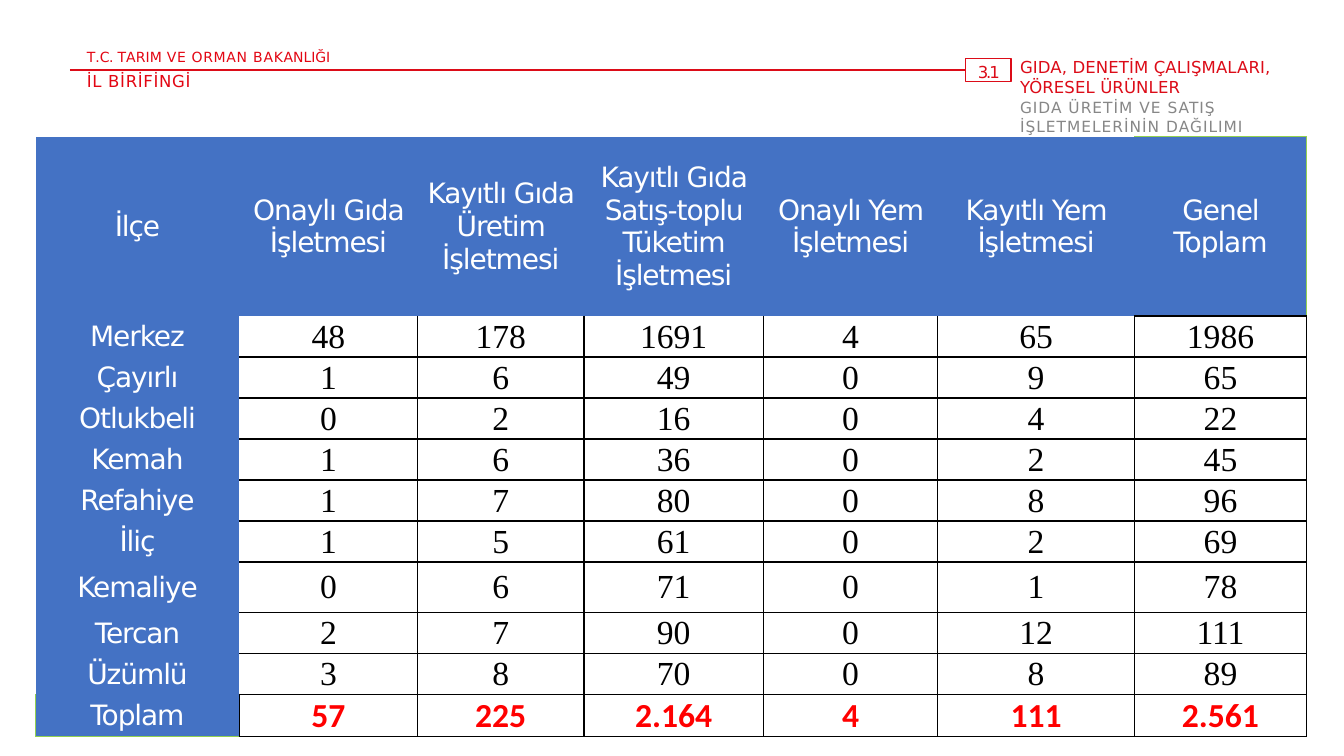
from lxml import etree
from pptx import Presentation
from pptx.dml.color import RGBColor
from pptx.enum.shapes import MSO_CONNECTOR, MSO_SHAPE
from pptx.enum.text import MSO_ANCHOR, MSO_AUTO_SIZE, PP_ALIGN
from pptx.oxml.ns import qn
from pptx.util import Pt

STRAIGHT, RECT = MSO_CONNECTOR.STRAIGHT, MSO_SHAPE.RECTANGLE
TOP, MIDDLE = MSO_ANCHOR.TOP, MSO_ANCHOR.MIDDLE
LEFT, CENTER = PP_ALIGN.LEFT, PP_ALIGN.CENTER
NO_FIT = MSO_AUTO_SIZE.NONE

COLORS = {"red": "E30613", "crimson": "DC0C18", "grey": "878787",
          "blue": "4472C4", "green": "92D050", "total": "FF0000",
          "black": "000000", "white": "FFFFFF"}
SANS, SERIF, TOTAL_FONT = "DejaVu Sans", "Times New Roman", "Calibri"
PLAIN_TABLE = "{2D5ABB26-0587-4C30-8999-92F81FD0307C}"

# Letter spacing in points for each piece of the ministry name
MINISTRY = [("T", -0.7), (".", -1.4), ("C. ", -0.3), ("T", -0.6), ("ARIM ", 0.1),
            ("VE ORMAN ", 0.5), ("BA", 0.6), ("K", 0.4), ("ANLIĞI", 0)]

COL_WIDTHS = [145.4, 127.4, 118.8, 128.2, 124.6, 140.4, 123.1]
HEADER_H, ROW_H, TALL_H = 128.2, 29.3, 36
TALL_ROW = "Kemaliye"
ROWS = [
    ["İlçe", "Onaylı Gıda İşletmesi", "Kayıtlı Gıda Üretim İşletmesi",
     "Kayıtlı Gıda Satış-toplu Tüketim İşletmesi", "Onaylı Yem İşletmesi",
     "Kayıtlı Yem İşletmesi", "Genel Toplam"],
    ["Merkez", "48", "178", "1691", "4", "65", "1986"],
    ["Çayırlı", "1", "6", "49", "0", "9", "65"],
    ["Otlukbeli", "0", "2", "16", "0", "4", "22"],
    ["Kemah", "1", "6", "36", "0", "2", "45"],
    ["Refahiye", "1", "7", "80", "0", "8", "96"],
    ["İliç", "1", "5", "61", "0", "2", "69"],
    ["Kemaliye", "0", "6", "71", "0", "1", "78"],
    ["Tercan", "2", "7", "90", "0", "12", "111"],
    ["Üzümlü", "3", "8", "70", "0", "8", "89"],
    ["Toplam", "57", "225", "2.164", "4", "111", "2.561"],
]


def rgb(name):
    return RGBColor.from_string(COLORS[name])


def write(p, pieces, size, color, font=SANS, bold=False, align=LEFT):
    """Fill a paragraph with (text, letter spacing) pieces in one font."""
    for text, spacing in pieces:
        r = p.add_run()
        r.text = text
        r._r.get_or_add_rPr().set("spc", str(round(spacing * 100)))
    p.alignment = align
    p.font.size, p.font.name, p.font.bold = Pt(size), font, bold
    p.font.color.rgb = rgb(color)


def set_frame(sp, top_inset=0.7):
    tf = sp.text_frame
    tf.word_wrap, tf.auto_size, tf.vertical_anchor = True, NO_FIT, TOP
    tf.margin_left = tf.margin_right = tf.margin_bottom = 0
    tf.margin_top = Pt(top_inset)
    return tf


def add_label(slide, x, y, w, h, pieces, size):
    sp = slide.shapes.add_textbox(Pt(x), Pt(y), Pt(w), Pt(h))
    p = set_frame(sp).paragraphs[0]
    p._p.get_or_add_pPr().set("marL", str(Pt(0.9)))
    write(p, pieces, size, "red")


def add_heading(slide):
    sp = slide.shapes.title
    sp.left, sp.top, sp.width, sp.height = Pt(728.6), Pt(40.3), Pt(218.9), Pt(56.9)
    tf = set_frame(sp)
    p = tf.paragraphs[0]
    write(p, [("GIDA, DENETİM ÇALIŞMALARI, YÖRESEL ÜRÜNLER", 0.1)], 11.8, "crimson")
    p = tf.add_paragraph()
    p.space_before = Pt(0.8)
    write(p, [("GIDA ÜRETİM VE SATIŞ İŞLETMELERİNİN DAĞILIMI", 0.7)], 11, "grey")


def add_badge(slide):
    sp = slide.shapes.add_shape(RECT, Pt(689.8), Pt(41.75), Pt(32.4), Pt(16.5))
    sp.shadow.inherit = False
    sp.fill.background()
    sp.line.color.rgb, sp.line.width = rgb("crimson"), Pt(0.82)
    p = set_frame(sp, 2.2).paragraphs[0]
    p._p.get_or_add_pPr().set("marL", str(Pt(8.6)))
    write(p, [("3 . 1", -2.6)], 11.8, "crimson")
    return sp


def add_rule(slide, badge):
    line = slide.shapes.add_connector(STRAIGHT, Pt(50), Pt(50), Pt(689.8), Pt(50))
    line.end_connect(badge, 1)
    line.line.color.rgb, line.line.width = rgb("crimson"), Pt(0.82)
    etree.SubElement(line._element.spPr, qn("a:effectLst"))


def set_borders(cell, borders):
    """Draw the sides given as {side: (color, width)}; leave the others bare."""
    tcPr = cell._tc.get_or_add_tcPr()
    for side in "LRTB":
        ln = etree.SubElement(tcPr, qn(f"a:ln{side}"))
        if side in borders:
            color, width = borders[side]
            ln.set("w", str(Pt(width)))
            fill = etree.SubElement(ln, qn("a:solidFill"))
            etree.SubElement(fill, qn("a:srgbClr")).set("val", COLORS[color])
        else:
            ln.set("w", "0")
            etree.SubElement(ln, qn("a:noFill"))


def cell_borders(i, j):
    last_row, last_col = len(ROWS) - 1, len(COL_WIDTHS) - 1
    black, green = ("black", 1), ("green", 0.5)
    if i == 0:
        return {"T": green, "R": green, "B": black} if j == last_col else {}
    if j == 0:
        return {"L": green, "R": black, "B": green} if i == last_row else {}
    sides = {"R": black, "B": black}
    if j > 1 or i == last_row:
        sides["L"] = black
    if i > 1 or j == last_col:
        sides["T"] = black
    return sides


def fill_cell(cell, i, j, text):
    set_borders(cell, cell_borders(i, j))
    is_header = i == 0 or j == 0
    cell.fill.solid()
    cell.fill.fore_color.rgb = rgb("blue" if is_header else "white")
    cell.vertical_anchor = MIDDLE
    cell.margin_left = cell.margin_right = cell.margin_top = Pt(0.7)
    cell.margin_bottom = 0
    p = cell.text_frame.paragraphs[0]
    if is_header:
        write(p, [(text, -0.8)], 20, "white", align=CENTER)
    elif i == len(ROWS) - 1:
        write(p, [(text, 0)], 24, "total", TOTAL_FONT, True, CENTER)
    else:
        write(p, [(text, 0)], 24, "black", SERIF, align=CENTER)


def add_business_table(slide):
    heights = [HEADER_H] + [TALL_H if row[0] == TALL_ROW else ROW_H for row in ROWS[1:]]
    frame = slide.shapes.add_table(len(ROWS), len(COL_WIDTHS), Pt(25.5), Pt(97.5),
                                   Pt(sum(COL_WIDTHS)), Pt(sum(heights)))
    table = frame.table
    table.horz_banding = False
    table._tbl.tblPr.find(qn("a:tableStyleId")).text = PLAIN_TABLE
    for column, width in zip(table.columns, COL_WIDTHS):
        column.width = Pt(width)
    for i, (row, height) in enumerate(zip(ROWS, heights)):
        table.rows[i].height = Pt(height)
        for j, text in enumerate(row):
            fill_cell(table.cell(i, j), i, j, text)


def main():
    prs = Presentation()
    prs.slide_width, prs.slide_height = Pt(960), Pt(540)
    slide = prs.slides.add_slide(prs.slide_layouts[5])

    # Page header
    add_label(slide, 61.2, 33.8, 176.4, 13, MINISTRY, 10)
    add_label(slide, 61.2, 49.7, 182.9, 15.1, [("İL BİRİFİNGİ", 0.5)], 11.8)
    add_heading(slide)
    add_rule(slide, add_badge(slide))

    # Food and feed businesses by district
    add_business_table(slide)

    prs.save("out.pptx")


if __name__ == "__main__":
    main()
